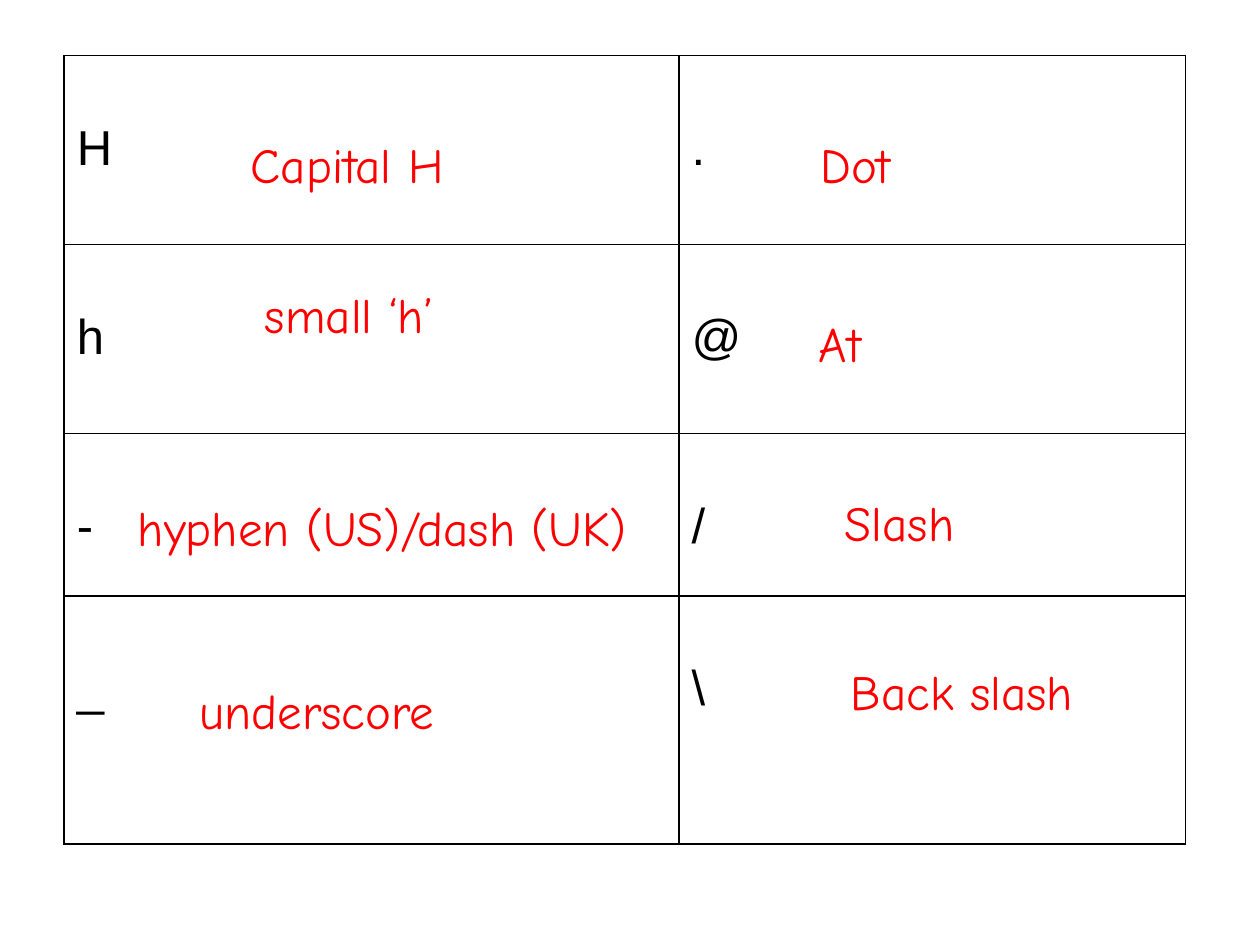
from lxml import etree
from pptx import Presentation
from pptx.dml.color import RGBColor
from pptx.enum import shapes, text
from pptx.oxml import ns
from pptx.util import Inches, Pt

THEME = {
    "symbol_font": "Arial",
    "answer_font": "Comic Neue",
    "size": 28,
    "ink": "000000",
    "answer": "FF0000",
    "paper": "FFFFFF",
    "border": 1,
}
SYMBOLS = [("H", "."), ("h", "@"), ("-", "/"), ("_", "\\")]
COLUMNS = [4.88, 4.02]
ROWS = [1.5, 1.5, 1.29, 1.97]
TABLE_AT = (0.51, 0.44)
SYMBOL_TOP = 0.52
ANSWERS = [
    ("Capital H", 1.3, 0.99, 2.91, 0.63),
    ("hyphen (US)/dash (UK)", 0.83, 3.75, 4.41, 0.87),
    ("underscore", 1.06, 5.32, 2.91, 0.63),
    ("Dot ", 5.87, 0.99, 1.97, 0.63),
    ("At ", 6.02, 2.41, 1.42, 0.63),
    ("Slash ", 6.18, 3.83, 2.05, 0.63),
    ("Back slash", 6.18, 5.17, 2.91, 0.63),
    ("small ‘h’ ", 1.38, 2.18, 2.91, 0.63),
]


def rgb(name):
    return RGBColor.from_string(THEME[name])


def write(tf, words, font, color, align):
    p = tf.paragraphs[0]
    p.alignment = align
    r = p.add_run()
    r.text = words
    r.font.name = THEME[font]
    r.font.size = Pt(THEME["size"])
    r.font.color.rgb = rgb(color)


def paint(obj):
    obj.fill.solid()
    obj.fill.fore_color.rgb = rgb("paper")


def add_borders(cell):
    tc_pr = cell._tc.get_or_add_tcPr()
    for i, side in enumerate(("lnL", "lnR", "lnT", "lnB")):
        ln = etree.Element(ns.qn(f"a:{side}"), w=str(Pt(THEME["border"])))
        fill = etree.SubElement(ln, ns.qn("a:solidFill"))
        etree.SubElement(fill, ns.qn("a:srgbClr"), val=THEME["ink"])
        tc_pr.insert(i, ln)


def add_symbols(slide):
    frame = slide.shapes.add_table(
        len(ROWS), len(COLUMNS), *map(Inches, (*TABLE_AT, sum(COLUMNS), sum(ROWS)))
    )
    table = frame.table
    for col, width in zip(table.columns, COLUMNS):
        col.width = Inches(width)
    for i, height in enumerate(ROWS):
        table.rows[i].height = Inches(height)
        for j, symbol in enumerate(SYMBOLS[i]):
            cell = table.cell(i, j)
            cell.margin_top = Inches(SYMBOL_TOP)
            paint(cell)
            add_borders(cell)
            write(cell.text_frame, symbol, font="symbol_font", color="ink",
                  align=text.PP_ALIGN.LEFT)


def add_answer(slide, words, *box):
    sp = slide.shapes.add_shape(shapes.MSO_SHAPE.RECTANGLE, *map(Inches, box))
    sp.shadow.inherit = False
    paint(sp)
    sp.line.fill.background()
    tf = sp.text_frame
    tf.word_wrap = True
    tf.vertical_anchor = text.MSO_ANCHOR.MIDDLE
    write(tf, words, font="answer_font", color="answer", align=text.PP_ALIGN.CENTER)


def main():
    """Build the slide of symbols and their spoken names."""
    prs = Presentation()
    prs.slide_width, prs.slide_height = Inches(10), Inches(7.5)
    slide = prs.slides.add_slide(prs.slide_layouts[6])
    add_symbols(slide)
    for answer in ANSWERS:
        add_answer(slide, *answer)
    prs.save("out.pptx")


if __name__ == "__main__":
    main()
